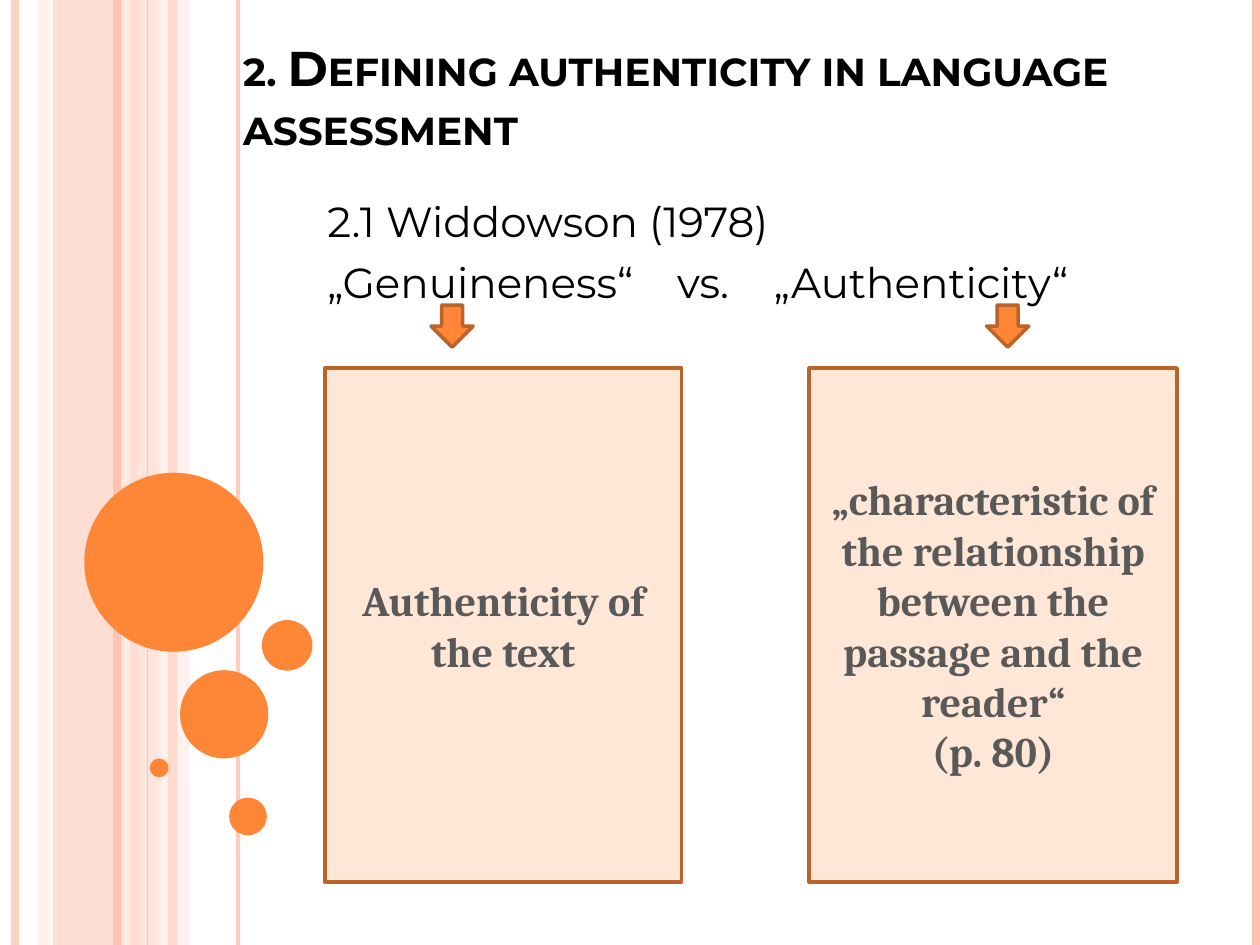
from lxml import etree
from pptx import Presentation, util as u
from pptx.dml.color import RGBColor
from pptx.enum import shapes, text
from pptx.oxml.ns import qn

COLOURS = {
    "rose": "FEC3AE", "blush": "FFD9CE", "pale": "FFEDE8", "orange": "FE8637",
    "rust": "BC6329", "peach": "FFE7D7", "grey": "595959", "black": "000000",
}
SLIDE_WIDTH, SLIDE_HEIGHT = 25.4, 19.05

presentation = Presentation()
presentation.slide_width = u.Cm(SLIDE_WIDTH)
presentation.slide_height = u.Cm(SLIDE_HEIGHT)
slide = presentation.slides.add_slide(presentation.slide_layouts[6])


def add_filled(kind, left, top, width, height, fill, opacity=100, outline=None):
    """Add a preset shape, sized in cm, with a flat fill and an optional outline."""
    shape = slide.shapes.add_shape(kind, u.Cm(left), u.Cm(top), u.Cm(width), u.Cm(height))
    shape.shadow.inherit = False
    shape.fill.solid()
    shape.fill.fore_color.rgb = RGBColor.from_string(COLOURS[fill])
    if opacity < 100:
        colour = shape.fill._xPr.find(".//" + qn("a:srgbClr"))
        etree.SubElement(colour, qn("a:alpha"), val=str(opacity * 1000))
    if outline:
        shape.line.color.rgb = RGBColor.from_string(COLOURS[outline])
        shape.line.width = u.Pt(2)
    else:
        shape.line.fill.background()
    return shape


def format_text(shape, font_name, size, colour, bold, alignment):
    for paragraph in shape.text_frame.paragraphs:
        paragraph.alignment = alignment
        for run in paragraph.runs:
            run.font.name = font_name
            run.font.size = u.Pt(size)
            run.font.bold = bold
            run.font.color.rgb = RGBColor.from_string(COLOURS[colour])


# Vertical bands: left, width, colour, opacity
RECTANGLE = shapes.MSO_SHAPE.RECTANGLE
for left, width, colour, opacity in [
    (1.07, 1.7, "rose", 54), (0.76, 0.28, "blush", 36),
    (2.74, 0.51, "blush", 70), (3.18, 0.64, "pale", 71),
]:
    add_filled(RECTANGLE, left, 0, width, SLIDE_HEIGHT, colour, opacity)

# Vertical stripes: x, colour, line width, opacity
for x, colour, line_width, opacity in [
    (0.3, "rose", 4.5, 73), (2.54, "pale", 4.5, 83), (2.36, "rose", 4.5, 100),
    (4.8, "rose", 2.25, 82), (2.97, "rose", 0.75, 100), (25.32, "rose", 4.5, 100),
]:
    stripe = slide.shapes.add_connector(
        shapes.MSO_CONNECTOR.STRAIGHT, u.Cm(x), u.Cm(0), u.Cm(x), u.Cm(SLIDE_HEIGHT))
    stripe.line.color.rgb = RGBColor.from_string(COLOURS[colour])
    stripe.line.width = u.Pt(line_width)
    properties = stripe._element.spPr
    if opacity < 100:
        etree.SubElement(properties.find(".//" + qn("a:srgbClr")), qn("a:alpha"),
                         val=str(opacity * 1000))
    etree.SubElement(properties, qn("a:effectLst"))

add_filled(RECTANGLE, 3.38, 0, 0.2, SLIDE_HEIGHT, "rose", 51)

# Bubbles: left, top, diameter
for left, top, diameter in [
    (1.7, 9.53, 3.61), (3.63, 13.51, 1.78), (3.02, 15.29, 0.38),
    (4.62, 16.08, 0.76), (5.28, 12.5, 1.02),
]:
    add_filled(shapes.MSO_SHAPE.OVAL, left, top, diameter, diameter, "orange")

# Title
title = slide.shapes.add_textbox(u.Cm(4.65), u.Cm(0.84), u.Cm(19.89), u.Cm(3.38))
title.text_frame.word_wrap = True
title.text_frame.vertical_anchor = text.MSO_ANCHOR.BOTTOM
title.text_frame.margin_top = 0
title.text_frame.margin_bottom = u.Cm(1.09)
title.text_frame.text = "2. Defining authenticity in language assessment"
format_text(title, "Montserrat", 27.9, "black", True, text.PP_ALIGN.LEFT)
title.text_frame.paragraphs[0].runs[0].font._element.set("cap", "small")

# Subtitle, with the two compared terms set on tab stops
subtitle = slide.shapes.add_textbox(u.Cm(6.35), u.Cm(2.54), u.Cm(17.58), u.Cm(15.16))
subtitle.text_frame.word_wrap = True
subtitle.text_frame.margin_top = u.Cm(1.4)
subtitle.text_frame.text = "2.1 Widdowson (1978)\n„Genuineness“\tvs.\t„Authenticity“"
comparison = subtitle.text_frame.paragraphs[1]
tab_list = etree.SubElement(comparison._p.get_or_add_pPr(), qn("a:tabLst"))
for position in (7.05, 9):
    etree.SubElement(tab_list, qn("a:tab"), pos=str(u.Cm(position)), algn="l")
comparison.space_before = u.Pt(6)
format_text(subtitle, "Montserrat", 24, "black", False, text.PP_ALIGN.LEFT)

# Definition boxes: left, width, wording
for left, width, wording in [
    (6.55, 7.19, "Authenticity of the text"),
    (16.31, 7.42, "„characteristic of the relationship between the passage "
                  "and the reader“\n(p. 80)"),
]:
    box = add_filled(RECTANGLE, left, 7.42, width, 10.36, "peach", outline="rust")
    box.text_frame.word_wrap = True
    box.text_frame.vertical_anchor = text.MSO_ANCHOR.MIDDLE
    box.text_frame.text = wording
    format_text(box, "Cambria", 24, "grey", True, text.PP_ALIGN.CENTER)

for left in (8.69, 19.89):
    add_filled(shapes.MSO_SHAPE.DOWN_ARROW, left, 6.15, 0.85, 0.85, "orange", outline="rust")

presentation.save("out.pptx")
